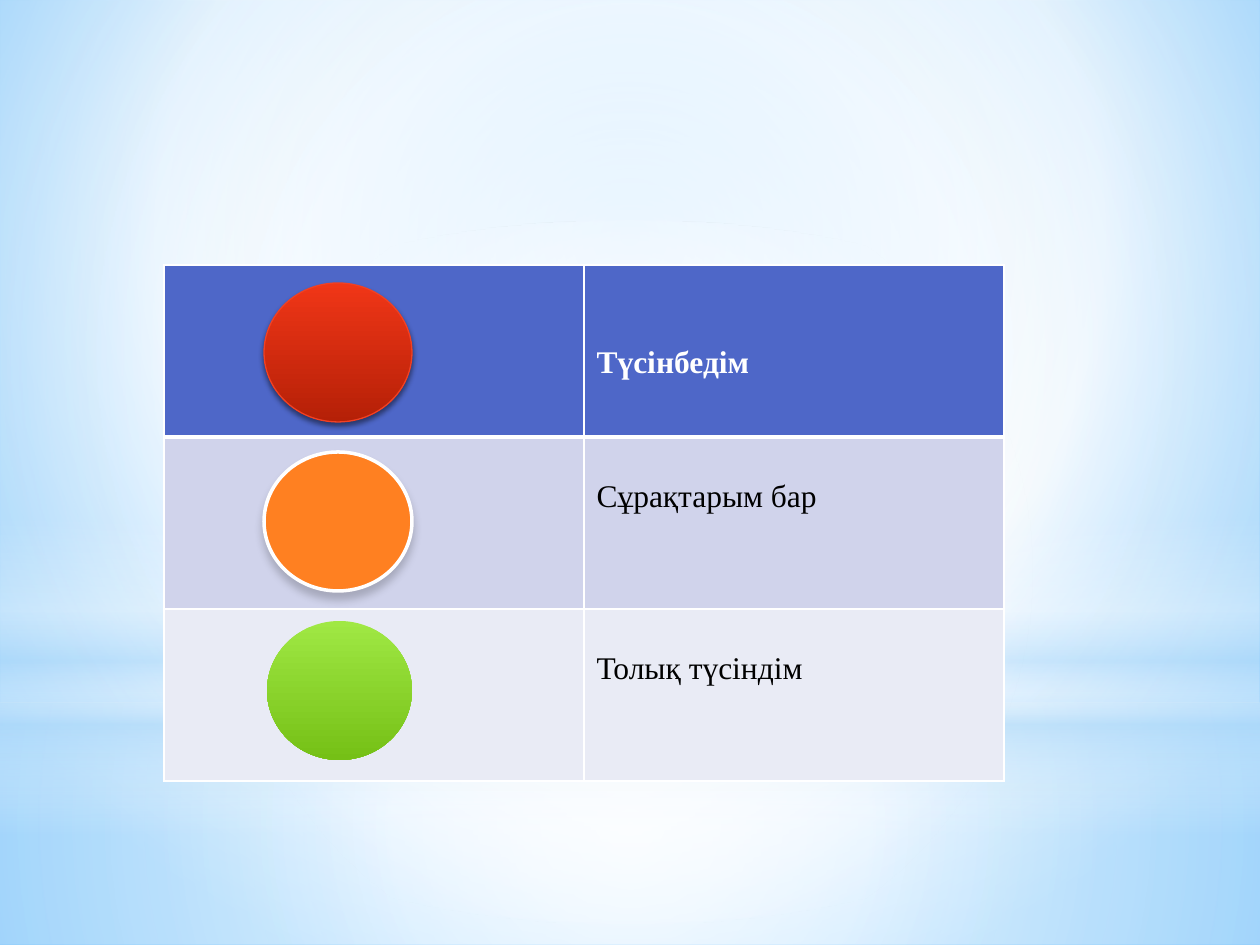
"""Builds a reflection slide: three signal circles with their meanings in a table."""
from lxml import etree
from pptx import Presentation
from pptx.dml.color import RGBColor
from pptx.enum.shapes import MSO_SHAPE
from pptx.oxml.ns import qn
from pptx.util import Pt

RECTANGLE, OVAL = MSO_SHAPE.RECTANGLE, MSO_SHAPE.OVAL
EMU_PER_PX = 914400 / 126
FONT = "Times New Roman"

WHITE = RGBColor(0xFF, 0xFF, 0xFF)
BLACK = RGBColor(0x00, 0x00, 0x00)
SKY = RGBColor(0x9E, 0xD5, 0xFF)
DEEP_SKY = RGBColor(0x5B, 0xB9, 0xFF)
MIST = RGBColor(0xB4, 0xDC, 0xFA)
HEADER_BLUE = RGBColor(0x4E, 0x67, 0xC8)
LAVENDER = RGBColor(0xD0, 0xD3, 0xEB)
PALE_LAVENDER = RGBColor(0xE9, 0xEB, 0xF5)
RED = RGBColor(0xF0, 0x36, 0x17)
DARK_RED = RGBColor(0xB5, 0x20, 0x07)
RED_EDGE = RGBColor(0xF1, 0x41, 0x24)
ORANGE = RGBColor(0xFF, 0x80, 0x21)
LIME = RGBColor(0xA0, 0xE8, 0x44)
GREEN = RGBColor(0x75, 0xC0, 0x16)

CENTRE = (50, 50, 50, 50)


def px(length):
    return round(length * EMU_PER_PX)


def add_node(parent, tag, **attributes):
    return etree.SubElement(parent, qn(tag), {key: str(value) for key, value in attributes.items()})


def add_colour(parent, colour, alpha=100):
    node = add_node(parent, "a:srgbClr", val=colour)
    if alpha < 100:
        add_node(node, "a:alpha", val=alpha * 1000)


def apply_gradient(fill, owner, stops, focus=None):
    fill.background()
    empty_fill = owner.find(".//" + qn("a:noFill"))
    gradient = etree.Element(qn("a:gradFill"), rotWithShape="1")
    stop_list = add_node(gradient, "a:gsLst")
    for position, *colour in stops:
        add_colour(add_node(stop_list, "a:gs", pos=position * 1000), *colour)
    if focus:
        circle = add_node(gradient, "a:path", path="circle")
        sides = {side: inset * 1000 for side, inset in zip("ltrb", focus)}
        add_node(circle, "a:fillToRect", **sides)
    else:
        add_node(gradient, "a:lin", ang=5400000, scaled=0)
    empty_fill.getparent().replace(empty_fill, gradient)


def write_text(frame, text, size=18, colour=BLACK, bold=False):
    run = frame.paragraphs[0].add_run()
    run.text = text
    run.font.name = FONT
    run.font.size = Pt(size)
    run.font.bold = bold
    run.font.color.rgb = colour


class SlideBuilder:
    """Holds the current slide and its shared table style."""

    def __init__(self, slide, border=WHITE):
        self.slide = slide
        self.border = border

    def backdrop(self, stops, focus):
        apply_gradient(self.slide.background.fill, self.slide.element, stops, focus)

    def shape(self, kind, box, stops=None, focus=None, colour=None, line=None, shadow=None):
        shape = self.slide.shapes.add_shape(kind, *map(px, box))
        shape.shadow.inherit = False
        properties = shape.element.spPr
        if stops:
            apply_gradient(shape.fill, properties, stops, focus)
        else:
            shape.fill.solid()
            shape.fill.fore_color.rgb = colour
        if line:
            shape.line.color.rgb, shape.line.width = line[0], Pt(line[1])
        else:
            shape.line.fill.background()
        if shadow:
            alpha, blur, distance = shadow
            effect = add_node(properties.find(qn("a:effectLst")), "a:outerShdw", blurRad=Pt(blur),
                              dist=Pt(distance), dir=5400000, rotWithShape=0)
            add_colour(effect, BLACK, alpha)

    def borders(self, cell, top, bottom):
        properties = cell._tc.get_or_add_tcPr()
        for index, (side, width) in enumerate(zip("LRTB", (1, 1, top, bottom))):
            line = etree.Element(qn("a:ln" + side), w=str(Pt(width)))
            add_colour(add_node(line, "a:solidFill"), self.border)
            properties.insert(index, line)

    def table(self, left, top, column_width, row_height, rows):
        table = self.slide.shapes.add_table(
            len(rows), 2, px(left), px(top), px(2 * column_width), px(row_height * len(rows))).table
        table.horz_banding = False
        for row_index, (meaning, fill, inset, text_format) in enumerate(rows):
            table.rows[row_index].height = px(row_height)
            for cell in table.rows[row_index].cells:
                cell.fill.solid()
                cell.fill.fore_color.rgb = fill
                self.borders(cell, 3 if row_index == 1 else 1, 3 if row_index == 0 else 1)
            meaning_cell = table.cell(row_index, 1)
            meaning_cell.margin_top = px(inset)
            write_text(meaning_cell.text_frame, meaning, **text_format)


def main():
    deck = Presentation()
    deck.slide_width, deck.slide_height = px(1260), px(945)
    builder = SlideBuilder(deck.slides.add_slide(deck.slide_layouts[6]))

    builder.backdrop([(0, SKY), (60, WHITE), (100, DEEP_SKY)], (20, 10, 20, 60))
    builder.shape(RECTANGLE, (0, 703, 1260, 242),
                  [(0, WHITE, 91), (37, WHITE, 76), (100, MIST, 79)], CENTRE)
    builder.shape(RECTANGLE, (0, 0, 1260, 703),
                  [(0, WHITE, 89), (48, WHITE, 62), (100, MIST, 79)], CENTRE)
    builder.shape(RECTANGLE, (0, 519, 1260, 315),
                  [(0, WHITE, 0), (29, WHITE, 30), (45, MIST, 40),
                   (55, WHITE, 26), (65, MIST, 60), (100, WHITE, 0)])
    builder.shape(OVAL, (0, 221, 1260, 703), [(0, WHITE), (56, WHITE, 0)], CENTRE)

    builder.table(164, 265, 420, 172, [
        ("Түсінбедім", HEADER_BLUE, 80, {"colour": WHITE, "bold": True}),
        ("Сұрақтарым бар", LAVENDER, 42, {}),
        ("Толық түсіндім", PALE_LAVENDER, 42, {}),
    ])

    signals = [
        (264, 148, {"stops": [(0, RED), (100, DARK_RED)], "line": (RED_EDGE, 0.75),
                    "shadow": (45, 3.1, 1.8)}),
        (264, 148, {"colour": ORANGE, "line": (WHITE, 2), "shadow": (20, 5, 4)}),
        (267, 145, {"stops": [(0, LIME), (100, GREEN)]}),
    ]
    for index, (left, width, style) in enumerate(signals):
        builder.shape(OVAL, (left, 283 + 169 * index, width, 139), **style)

    deck.save("out.pptx")


if __name__ == "__main__":
    main()
